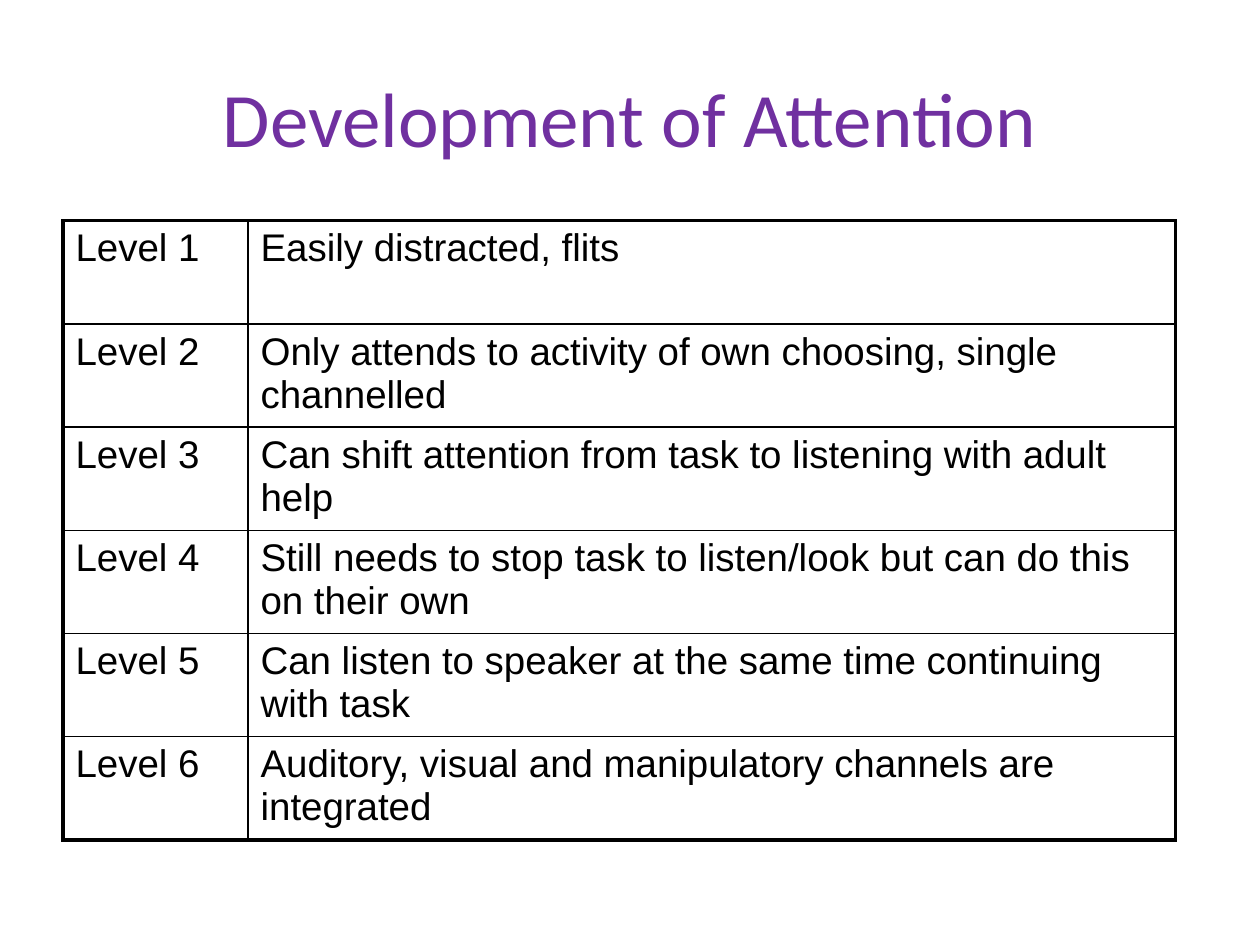
from lxml.etree import SubElement
from pptx import Presentation
from pptx.dml.color import RGBColor
from pptx.enum.text import MSO_ANCHOR, PP_ALIGN
from pptx.oxml.ns import qn
from pptx.util import Cm, Pt

LEVELS = [
    "Easily distracted, flits",
    "Only attends to activity of own choosing, single channelled",
    "Can shift attention from task to listening with adult help",
    "Still needs to stop task to listen/look but can do this on their own",
    "Can listen to speaker at the same time continuing with task",
    "Auditory, visual and manipulatory channels are integrated",
]
INK = "000000"


def write(frame, text, size, font, color, align=PP_ALIGN.LEFT, anchor=MSO_ANCHOR.TOP):
    frame.word_wrap = True
    frame.vertical_anchor = anchor
    para = frame.paragraphs[0]
    para.alignment = align
    span = para.add_run()
    span.text = text
    span.font.size = Pt(size)
    span.font.name = font
    span.font.bold = False
    span.font.color.rgb = RGBColor.from_string(color)


def add_border(cell, side, width):
    """Draw one side (L, R, T or B, called in that order) before the cell is filled."""
    line = SubElement(cell._tc.get_or_add_tcPr(), qn(f"a:ln{side}"), w=str(Pt(width)))
    fill = SubElement(line, qn("a:solidFill"))
    SubElement(fill, qn("a:srgbClr"), val=INK)


deck = Presentation()
deck.slide_width = Cm(25.4)
deck.slide_height = Cm(19.05)
page = deck.slides.add_slide(deck.slide_layouts[5])

title = page.shapes.title
title.left, title.top, title.width, title.height = Cm(1.27), Cm(0.76), Cm(22.86), Cm(3.18)
write(title.text_frame, "Development of Attention", 44, "Calibri", "7030A0",
      align=PP_ALIGN.CENTER, anchor=MSO_ANCHOR.MIDDLE)

row_height = Cm(2.08)
last = len(LEVELS) - 1
table = page.shapes.add_table(len(LEVELS), 2, Cm(1.27), Cm(4.45), Cm(22.43),
                              row_height * len(LEVELS)).table
table.first_row = False
table.horz_banding = False
table.columns[0].width = Cm(3.73)
table.columns[1].width = Cm(18.7)

for row, description in enumerate(LEVELS):
    table.rows[row].height = row_height
    for column, text in enumerate([f"Level {row + 1}", description]):
        cell = table.cell(row, column)
        outer = {"L": column == 0, "R": column == 1, "T": row == 0, "B": row == last}
        for side, is_outer in outer.items():
            add_border(cell, side, 2.25 if is_outer else 1)
        cell.fill.background()
        write(cell.text_frame, text, 22, "Arial", INK)

deck.save("out.pptx")
